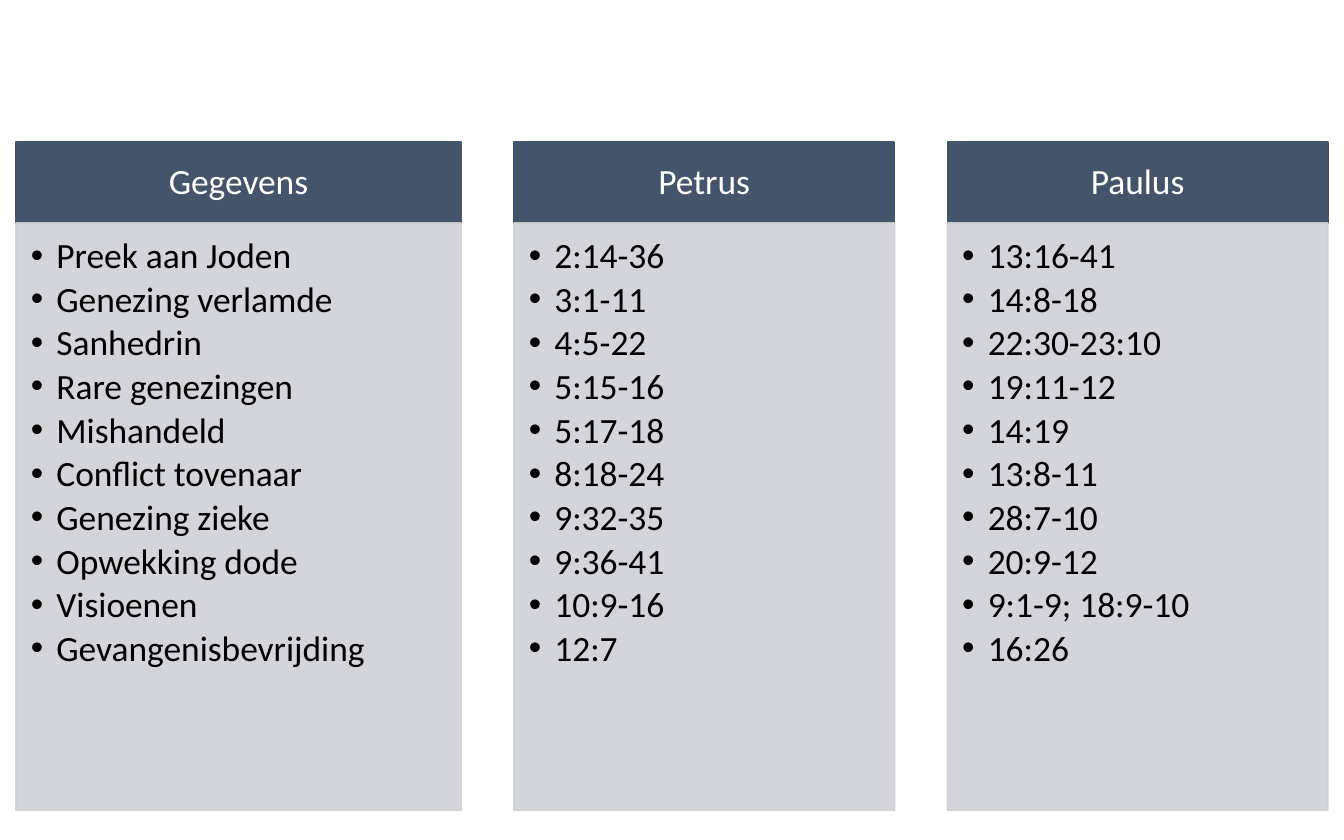
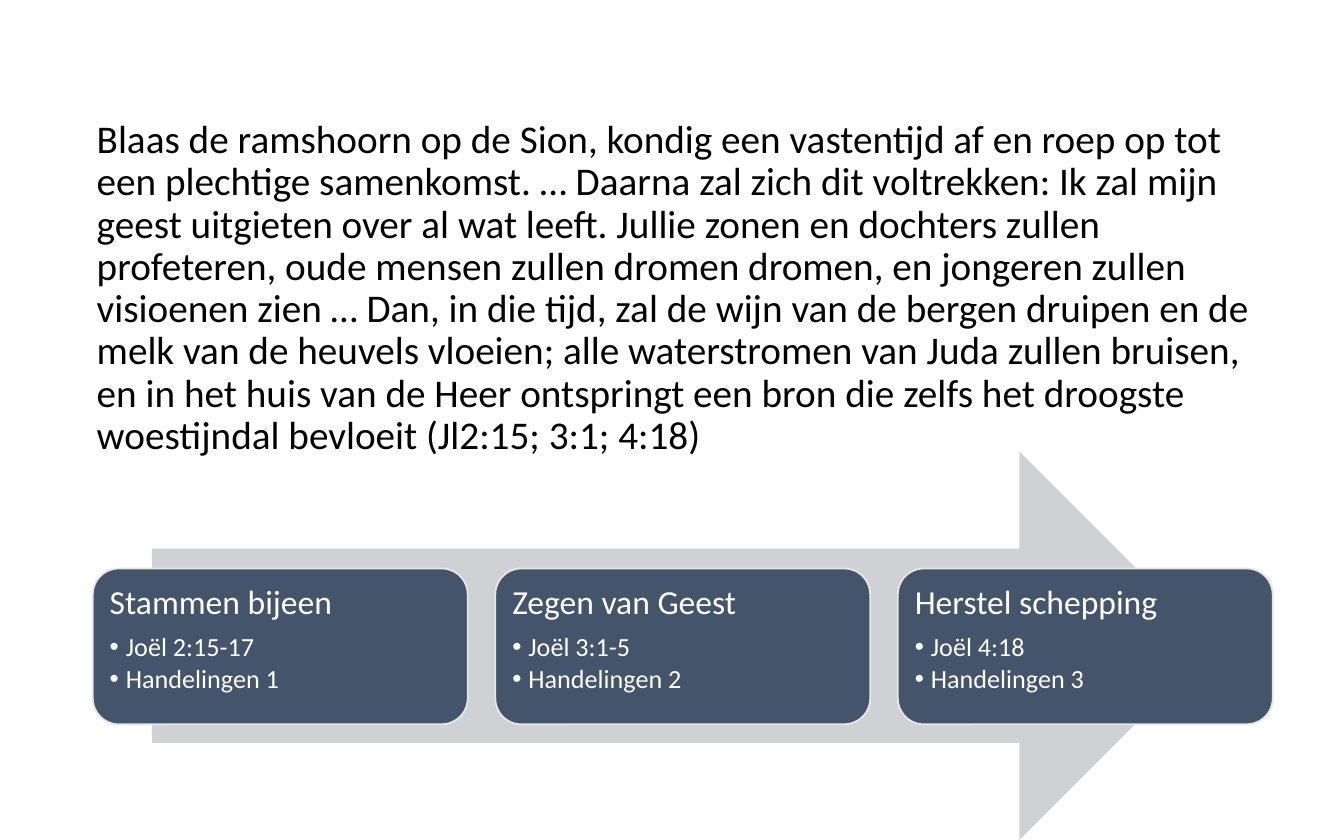
from lxml.etree import SubElement
from pptx import Presentation
from pptx.dml.color import RGBColor
from pptx.enum.shapes import MSO_SHAPE as Preset
from pptx.enum.text import MSO_ANCHOR as Anchor, PP_ALIGN as Align
from pptx.oxml.ns import qn
from pptx.util import Inches, Pt

CELL = Inches(0.1)
COLUMNS, ROWS = 100, 62.5
FONT = "Calibri"
NAVY = RGBColor(0x44, 0x54, 0x6A)
GREY = RGBColor(0xCF, 0xD1, 0xD4)
PALE = RGBColor(0xE7, 0xE6, 0xE6)
WHITE = RGBColor(0xFF, 0xFF, 0xFF)
BLACK = RGBColor(0x00, 0x00, 0x00)

REFERENCES = [
    ("Gegevens", 33.1, [
        "Preek aan Joden", "Genezing verlamde", "Sanhedrin", "Rare genezingen",
        "Mishandeld", "Conflict tovenaar", "Genezing zieke", "Opwekking dode",
        "Visioenen", "Gevangenisbevrijding"]),
    ("Petrus", 28.3, [
        "2:14-36", "3:1-11", "4:5-22", "5:15-16", "5:17-18",
        "8:18-24", "9:32-35", "9:36-41", "10:9-16", "12:7"]),
    ("Paulus", 28.3, [
        "13:16-41", "14:8-18", "22:30-23:10", "19:11-12", "14:19",
        "13:8-11", "28:7-10", "20:9-12", "9:1-9; 18:9-10", "16:26"]),
]
STAGES = [
    ("Stammen bijeen", ["Joël 2:15-17", "Handelingen 1"]),
    ("Zegen van Geest", ["Joël 3:1-5", "Handelingen 2"]),
    ("Herstel schepping", ["Joël 4:18", "Handelingen 3"]),
]
QUOTE = (
    "Blaas de ramshoorn op de Sion, kondig een vastentijd af en roep op tot een "
    "plechtige samenkomst. … Daarna zal zich dit voltrekken: Ik zal mijn geest "
    "uitgieten over al wat leeft. Jullie zonen en dochters zullen profeteren, oude "
    "mensen zullen dromen dromen, en jongeren zullen visioenen zien … Dan, in die "
    "tijd, zal de wijn van de bergen druipen en de melk van de heuvels vloeien; alle "
    "waterstromen van Juda zullen bruisen, en in het huis van de Heer ontspringt een "
    "bron die zelfs het droogste woestijndal bevloeit (Jl2:15; 3:1; 4:18)"
)


def cells(*lengths):
    """Turn lengths in grid cells into slide units."""
    return [round(length * CELL) for length in lengths]


def spread(left, right, widths):
    """Return the left edges of items set between two columns with equal gaps."""
    gap = (right - left - sum(widths)) / (len(widths) - 1)
    return [left + sum(widths[:index]) + index * gap for index in range(len(widths))]


def add_panel(slide, preset, box, fill, line=None, opacity=None):
    """Add a filled preset shape, with an optional outline and opacity."""
    shape = slide.shapes.add_shape(preset, *cells(*box))
    shape.shadow.inherit = False
    shape.fill.solid()
    shape.fill.fore_color.rgb = fill
    if line is None:
        shape.line.fill.background()
    else:
        shape.line.color.rgb = line
        shape.line.width = Pt(1)
    if opacity is not None:
        for color in shape._element.spPr.iter(qn("a:srgbClr")):
            SubElement(color, qn("a:alpha"), val=str(opacity * 1000))
    return shape


def set_frame(shape, insets, anchor=Anchor.TOP):
    """Wrap the text of a shape and set its insets and anchor."""
    frame = shape.text_frame
    frame.word_wrap = True
    frame.vertical_anchor = anchor
    (frame.margin_left, frame.margin_top,
     frame.margin_right, frame.margin_bottom) = cells(*insets)
    return frame


def style_paragraph(paragraph, size, color, align=Align.LEFT, after=0, bullet_indent=None):
    """Set font, spacing in percent of a line, and an optional hanging bullet."""
    paragraph.alignment = align
    paragraph.line_spacing = 0.9
    properties = paragraph._p.get_or_add_pPr()
    if after:
        spacing = SubElement(properties, qn("a:spcAft"))
        SubElement(spacing, qn("a:spcPct"), val=str(after * 1000))
    if bullet_indent:
        paragraph.level = 1
        indent, = cells(bullet_indent)
        properties.set("marL", str(indent))
        properties.set("indent", str(-indent))
        SubElement(properties, qn("a:buFont"), typeface="Arial")
        SubElement(properties, qn("a:buChar"), char="•")
    for run in paragraph.runs:
        run.font.name = FONT
        run.font.size = Pt(size)
        run.font.color.rgb = color


def add_reference_column(slide, left, width, heading, entries):
    """Add a heading band with a bulleted panel below it."""
    top, band, body = 10.6, 6, 43.7
    header = add_panel(slide, Preset.RECTANGLE, (left, top, width, band), NAVY, NAVY)
    frame = set_frame(header, (1.5, 0.8, 1.5, 0.8), Anchor.MIDDLE)
    frame.text = heading
    style_paragraph(frame.paragraphs[0], 19, WHITE, Align.CENTER, after=35)
    panel = add_panel(slide, Preset.RECTANGLE, (left, top + band, width, body),
                      GREY, GREY, opacity=90)
    frame = set_frame(panel, (1.1, 1.1, 1.5, 1.7))
    frame.text = "\n".join(entries)
    for paragraph in frame.paragraphs:
        style_paragraph(paragraph, 19, BLACK, after=15, bullet_indent=1.9)


def add_stage_card(slide, left, width, heading, passages):
    """Add a rounded card with a heading and bulleted passages."""
    card = add_panel(slide, Preset.ROUNDED_RECTANGLE, (left, 42.3, width, 11.6), NAVY, PALE)
    frame = set_frame(card, (0.7, 0.7, 0.7, 0.7))
    frame.text = "\n".join([heading, *passages])
    title, *bullets = frame.paragraphs
    style_paragraph(title, 18, WHITE, after=35)
    for paragraph in bullets:
        style_paragraph(paragraph, 14, WHITE, after=15, bullet_indent=1.2)


def add_quote(slide, text):
    """Add the long quotation above the arrow."""
    box = slide.shapes.add_textbox(*cells(5, 8.4, 90, 27.6))
    frame = set_frame(box, (2.2, 0.5, 1, 0.5))
    frame.text = text
    paragraph = frame.paragraphs[0]
    style_paragraph(paragraph, 21, BLACK)
    paragraph.space_before = Pt(7.5)


def build_references(slide):
    """Lay out the three columns of references."""
    margin = 1.2
    widths = [width for _, width, _ in REFERENCES]
    lefts = spread(margin, COLUMNS - margin, widths)
    for left, (heading, width, entries) in zip(lefts, REFERENCES):
        add_reference_column(slide, left, width, heading, entries)


def build_stages(slide):
    """Lay out the quotation and the arrow with its three cards."""
    add_quote(slide, QUOTE)
    add_panel(slide, Preset.RIGHT_ARROW, (11.3, 33.6, 79, ROWS - 33.6), GREY)
    width = 27.9
    lefts = spread(6.9, 94.7, [width] * len(STAGES))
    for left, (heading, passages) in zip(lefts, STAGES):
        add_stage_card(slide, left, width, heading, passages)


def main():
    """Build both slides and save the presentation."""
    presentation = Presentation()
    presentation.slide_width, presentation.slide_height = cells(COLUMNS, ROWS)
    blank = presentation.slide_layouts[6]
    for build in (build_references, build_stages):
        build(presentation.slides.add_slide(blank))
    presentation.save("out.pptx")


if __name__ == "__main__":
    main()
